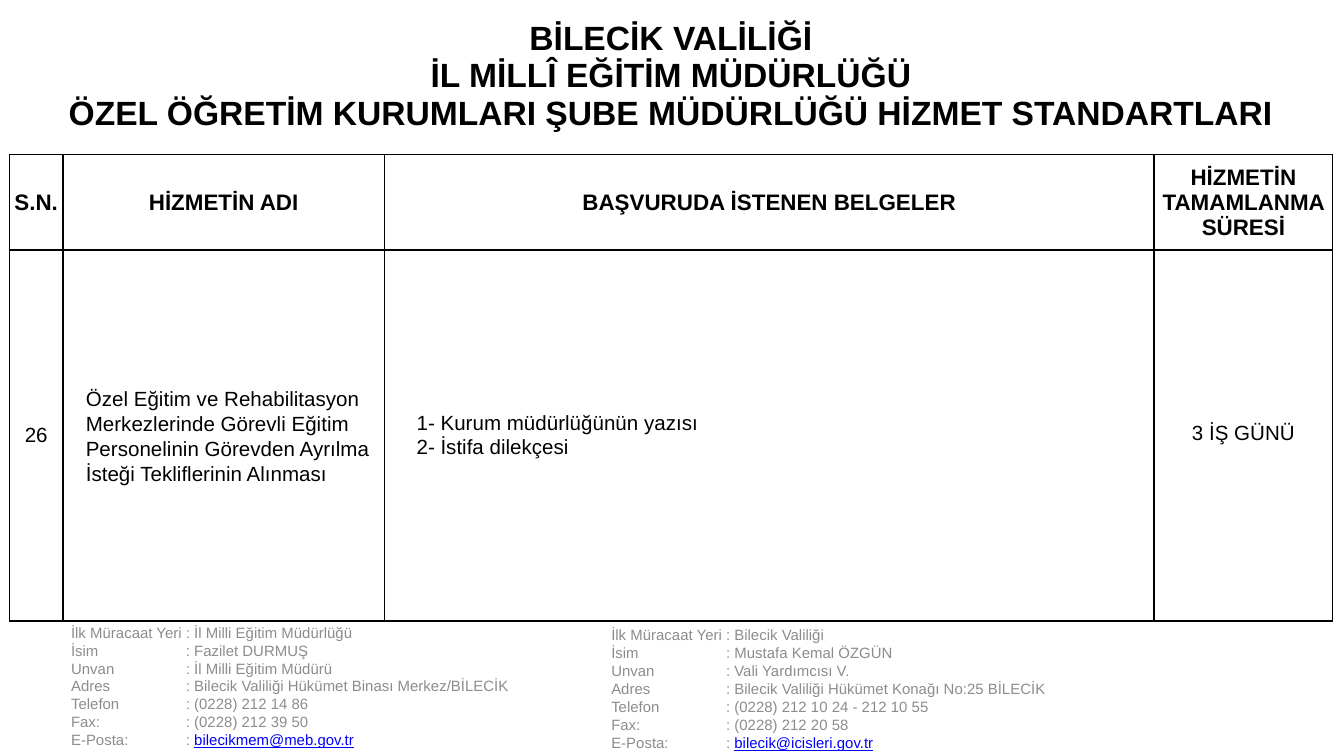
from dataclasses import dataclass
from typing import Optional

from lxml.etree import SubElement
from pptx import Presentation
from pptx.dml.color import RGBColor as Rgb
from pptx.enum.text import MSO_ANCHOR as Anchor, PP_ALIGN as Align
from pptx.oxml.ns import qn
from pptx.util import Length, Pt


@dataclass(frozen=True)
class Theme:
    font: str = "Arial"
    ink: Rgb = Rgb(0, 0, 0)
    muted: Rgb = Rgb(0x8C, 0x8C, 0x8C)
    email: Rgb = Rgb(0, 0, 0xFF)
    heading_size: Length = Pt(18)
    header_size: Length = Pt(12)
    body_size: Length = Pt(11)
    contact_size: Length = Pt(8)
    border: Length = Pt(1)


@dataclass(frozen=True)
class CellStyle:
    size: Length
    bold: bool = False
    align: Align = Align.CENTER
    margin_x: Length = Pt(0)
    margin_y: Length = Pt(0)
    indent: Length = Pt(0)
    space_before: Length = Pt(0)
    line_spacing: Optional[float] = None
    sides: str = "LRTB"


@dataclass(frozen=True)
class Contact:
    left: Length
    top: Length
    office: str
    person: str
    role: str
    address: str
    phone: str
    fax: str
    email: str


THEME = Theme()
PADDED = dict(margin_x=Pt(7.2), margin_y=Pt(3.6))
HEADING = CellStyle(THEME.heading_size, bold=True, sides="B")
HEADER = CellStyle(THEME.header_size, bold=True)
NUMBER = CellStyle(THEME.body_size)
SERVICE = CellStyle(THEME.body_size, align=Align.LEFT, indent=Pt(5),
                    line_spacing=1.1, **PADDED)
DOCUMENTS = CellStyle(THEME.body_size, align=Align.LEFT, indent=Pt(10),
                      space_before=Pt(0.8), **PADDED)
DURATION = CellStyle(THEME.body_size, line_spacing=Pt(10), **PADDED)

COLUMN_WIDTHS = [Pt(28.8), Pt(172.2), Pt(412.4), Pt(95.6)]
ROW_HEIGHTS = [Pt(84.2), Pt(51.2), Pt(198.6)]
ROWS = [
    [(["BİLECİK VALİLİĞİ", "İL MİLLÎ EĞİTİM MÜDÜRLÜĞÜ",
       "ÖZEL ÖĞRETİM KURUMLARI ŞUBE MÜDÜRLÜĞÜ HİZMET STANDARTLARI"], HEADING)]
    + [([], HEADING)] * 3,
    [([label], HEADER) for label in (
        "S.N.", "HİZMETİN ADI", "BAŞVURUDA İSTENEN BELGELER",
        "HİZMETİN TAMAMLANMA SÜRESİ")],
    [(["26"], NUMBER),
     (["Özel Eğitim ve Rehabilitasyon Merkezlerinde Görevli Eğitim "
       "Personelinin Görevden Ayrılma İsteği Tekliflerinin Alınması"], SERVICE),
     (["1- Kurum müdürlüğünün yazısı", "2- İstifa dilekçesi"], DOCUMENTS),
     (["3 İŞ GÜNÜ"], DURATION)],
]
CONTACTS = [
    Contact(Pt(31), Pt(332.6), "İl Milli Eğitim Müdürlüğü", "Fazilet DURMUŞ",
            "İl Milli Eğitim Müdürü",
            "Bilecik Valiliği Hükümet Binası Merkez/BİLECİK",
            "(0228) 212 14 86", "(0228) 212 39 50", "bilecikmem@meb.gov.tr"),
    Contact(Pt(320.4), Pt(334), "Bilecik Valiliği", "Mustafa Kemal ÖZGÜN",
            "Vali Yardımcısı V.",
            "Bilecik Valiliği Hükümet Konağı No:25 BİLECİK",
            "(0228) 212 10 24 - 212 10 55", "(0228) 212 20 58",
            "bilecik@icisleri.gov.tr"),
]


def add_run(paragraph, text: str, size: Length, color: Rgb,
            bold: bool = False, underline: bool = False) -> None:
    run = paragraph.add_run()
    run.text = text
    font = run.font
    font.name, font.size, font.bold, font.underline = THEME.font, size, bold, underline
    font.color.rgb = color


def next_paragraph(frame, index: int):
    return frame.add_paragraph() if index else frame.paragraphs[0]


def set_borders(cell, sides: str) -> None:
    properties = cell._tc.get_or_add_tcPr()
    for side in "LRTB":
        line = SubElement(properties, qn(f"a:ln{side}"), w=str(THEME.border))
        if side in sides:
            fill = SubElement(line, qn("a:solidFill"))
            SubElement(fill, qn("a:srgbClr"), val=str(THEME.ink))
        else:
            SubElement(line, qn("a:noFill"))


def fill_cell(cell, lines: list[str], style: CellStyle) -> None:
    set_borders(cell, style.sides)
    cell.fill.background()
    cell.vertical_anchor = Anchor.MIDDLE
    cell.margin_left = cell.margin_right = style.margin_x
    cell.margin_top = cell.margin_bottom = style.margin_y
    for index, line in enumerate(lines):
        paragraph = next_paragraph(cell.text_frame, index)
        paragraph.alignment = style.align
        paragraph.space_before = style.space_before
        paragraph.line_spacing = style.line_spacing
        paragraph._p.get_or_add_pPr().set("marL", str(style.indent))
        add_run(paragraph, line, style.size, THEME.ink, style.bold)


def add_service_table(slide) -> None:
    table = slide.shapes.add_table(
        len(ROWS), len(COLUMN_WIDTHS), Pt(5), Pt(-1.4),
        sum(COLUMN_WIDTHS), sum(ROW_HEIGHTS)).table
    table.first_row = table.horz_banding = False
    for column, width in zip(table.columns, COLUMN_WIDTHS):
        column.width = width
    for row, height in zip(table.rows, ROW_HEIGHTS):
        row.height = height
    table.cell(0, 0).merge(table.cell(0, len(COLUMN_WIDTHS) - 1))
    for row, contents in zip(table.rows, ROWS):
        for cell, (lines, style) in zip(row.cells, contents):
            fill_cell(cell, lines, style)


def add_contact(slide, contact: Contact) -> None:
    frame = slide.shapes.add_textbox(
        contact.left, contact.top, Pt(340), Pt(72)).text_frame
    frame.word_wrap = True
    frame.vertical_anchor = Anchor.BOTTOM
    entries = [("İlk Müracaat Yeri", contact.office), ("İsim", contact.person),
               ("Unvan", contact.role), ("Adres", contact.address),
               ("Telefon", contact.phone), ("Fax:", contact.fax),
               ("E-Posta:", contact.email)]
    for index, (label, value) in enumerate(entries):
        paragraph = next_paragraph(frame, index)
        # One tab stop lines up the colons
        tabs = SubElement(paragraph._p.get_or_add_pPr(), qn("a:tabLst"))
        SubElement(tabs, qn("a:tab"), pos=str(Pt(61.5)), algn="l")
        add_run(paragraph, f"{label}\t: ", THEME.contact_size, THEME.muted)
        is_email = value == contact.email
        add_run(paragraph, value, THEME.contact_size,
                THEME.email if is_email else THEME.muted, underline=is_email)


def main() -> None:
    deck = Presentation()
    deck.slide_width, deck.slide_height = Pt(720), Pt(405)
    # The heading is the table's first row, so the blank layout is used
    slide = deck.slides.add_slide(deck.slide_layouts[6])
    # Contact details at the foot
    for contact in CONTACTS:
        add_contact(slide, contact)
    # Heading, column headers and service row
    add_service_table(slide)
    deck.save("out.pptx")


if __name__ == "__main__":
    main()
